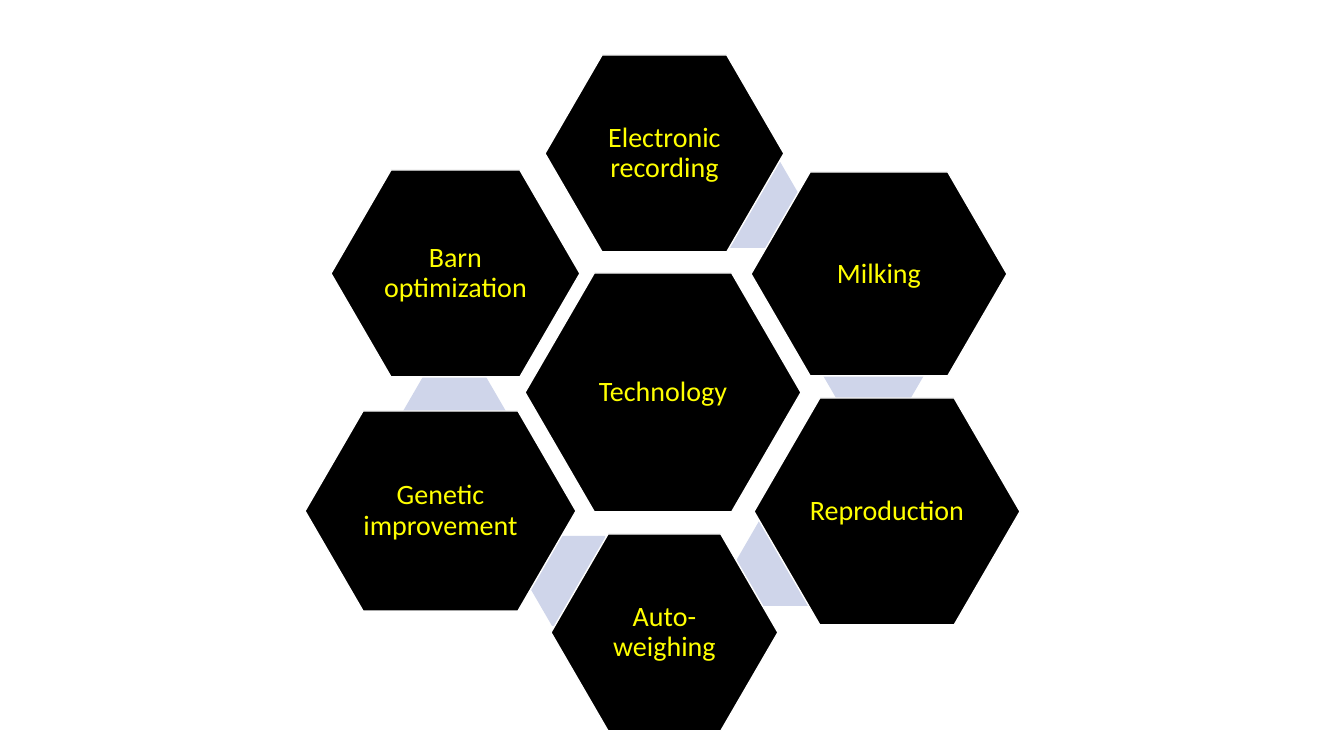
import pptx
import pptx.util
import pptx.dml.color
import pptx.enum.shapes
import pptx.enum.text

SCALE = 9144000 / 1008


def px(n):
    return pptx.util.Emu(round(n * SCALE))


def tint(code):
    return pptx.dml.color.RGBColor.from_string(code)


def write(frame, text, font="Calibri", size=20, color="FFFF00", space=0.9, pad=3):
    frame.word_wrap = True
    frame.vertical_anchor = pptx.enum.text.MSO_ANCHOR.MIDDLE
    frame.margin_left = frame.margin_right = px(pad)
    frame.margin_top = frame.margin_bottom = px(pad)
    para = frame.paragraphs[0]
    para.alignment = pptx.enum.text.PP_ALIGN.CENTER
    para.line_spacing = space
    run = para.add_run()
    run.text = text
    run.font.name = font
    run.font.size = pptx.util.Pt(size)
    run.font.color.rgb = tint(color)


class Board:
    dark = "000000"
    pale = "CFD5EA"
    edge = "FFFFFF"

    def __init__(self, slide):
        self.slide = slide

    def hex(self, left, top, width, height, fill):
        shape = self.slide.shapes.add_shape(
            pptx.enum.shapes.MSO_SHAPE.HEXAGON,
            px(left), px(top), px(width), px(height))
        shape.adjustments[0] = 0.29
        shape.shadow.inherit = False
        shape.fill.solid()
        shape.fill.fore_color.rgb = tint(fill)
        shape.line.fill.background()
        return shape

    def link(self, left, top):
        self.hex(left, top, 105, 90, self.pale)

    def cell(self, text, left, top, width, height):
        shape = self.hex(left, top, width, height, self.dark)
        shape.line.color.rgb = tint(self.edge)
        shape.line.width = pptx.util.Pt(1)
        write(shape.text_frame, text)


CELLS = [
    (None, "Technology", (525, 273, 276, 239)),
    ((699, 158), "Electronic recording", (545, 55, 239, 197)),
    ((821, 327), "Milking", (751, 172, 256, 204)),
    ((736, 516), "Reproduction", (754, 398, 266, 227)),
    ((526, 536), "Auto-weighing", (551, 534, 227, 197)),
    ((402, 368), "Genetic improvement", (305, 411, 271, 200)),
    (None, "Barn optimization", (331, 170, 249, 207)),
]


def main():
    deck = pptx.Presentation()
    deck.slide_width = px(1344)
    deck.slide_height = px(756)
    board = Board(deck.slides.add_slide(deck.slide_layouts[6]))
    for link, text, box in CELLS:
        if link:
            board.link(*link)
        board.cell(text, *box)
    deck.save("out.pptx")


if __name__ == "__main__":
    main()
